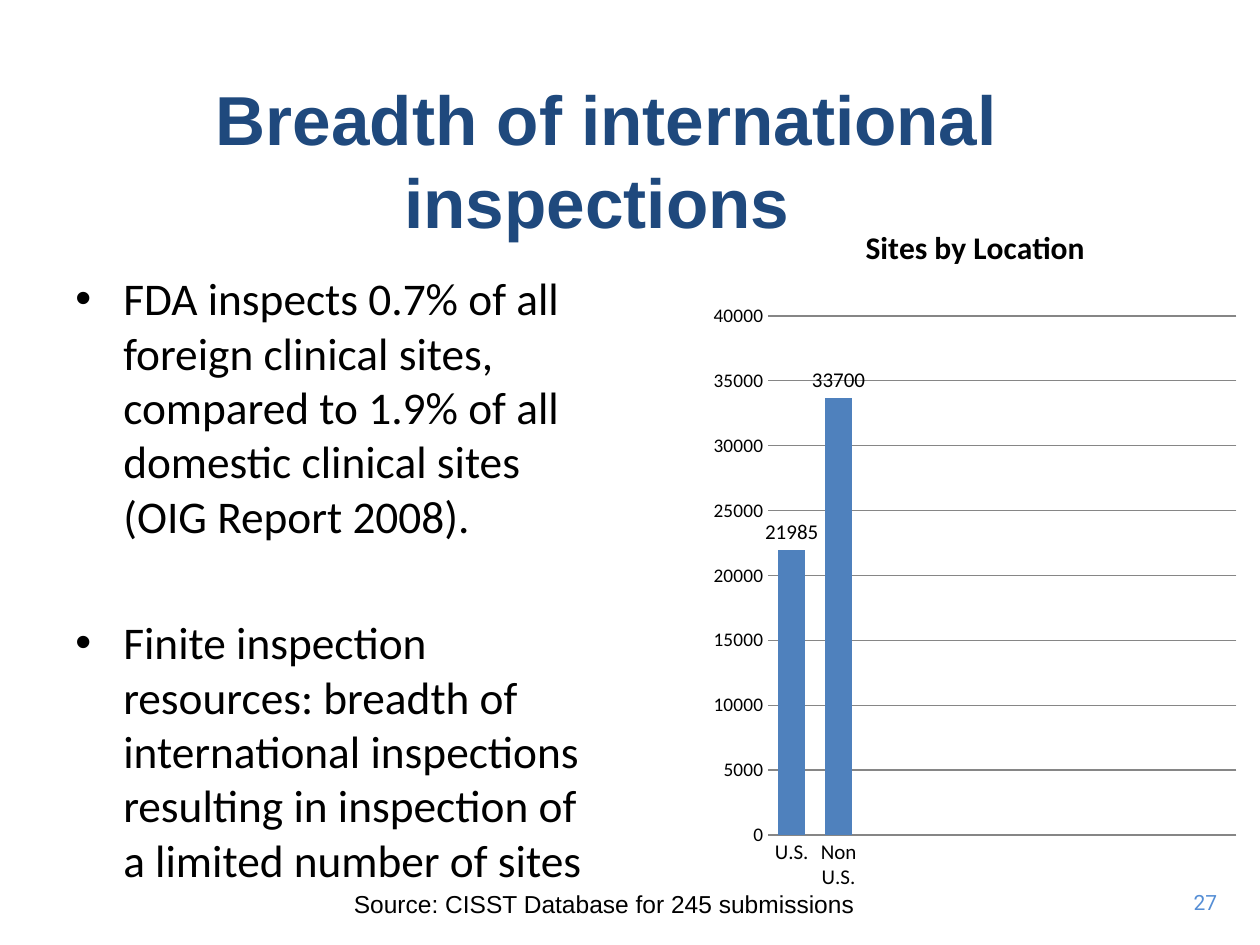
import pptx
import pptx.chart.data
import pptx.dml.color
import pptx.enum.chart
import pptx.enum.text
import pptx.util
from lxml import etree
from pptx.oxml.ns import qn

Inches, Pt = pptx.util.Inches, pptx.util.Pt
RGBColor = pptx.dml.color.RGBColor
ALIGN = pptx.enum.text.PP_ALIGN
ANCHOR = pptx.enum.text.MSO_ANCHOR

NAVY = RGBColor(0x1F, 0x49, 0x7D)
BLACK = RGBColor(0, 0, 0)
BAR_BLUE = RGBColor(0x4F, 0x81, 0xBD)
PALE_BLUE = RGBColor(0x55, 0x8E, 0xD5)
GRID_GRAY = RGBColor(0x86, 0x86, 0x86)

HEADING = "Breadth of international inspections "
POINTS = [
    "FDA inspects 0.7% of all foreign clinical sites, compared to 1.9% of all "
    "domestic clinical sites (OIG Report 2008).",
    "Finite inspection resources: breadth of international inspections "
    "resulting in inspection of a limited number of sites",
]
SOURCE = "Source: CISST Database for 245 submissions"
PAGE = "27"
CHART_TITLE = "Sites by Location"
SITES = [("U.S.", 21985), ("Non U.S.", 33700)]
CATEGORY_SLOTS = 10
PLOT_SHARES = {"x": 0.12, "y": 0.166, "w": 0.86, "h": 0.737}

HEADING_FONT = {"name": "Arial", "size": Pt(39.6), "bold": True}
POINT_FONT = {"name": "Calibri", "size": Pt(25.9)}
SOURCE_FONT = {"name": "Arial", "size": Pt(14)}
PAGE_FONT = {"name": "Roboto", "size": Pt(12)}


def style(font, formats, color):
    for key, value in formats.items():
        setattr(font, key, value)
    font.color.rgb = color


def add_bullet(paragraph):
    properties = paragraph._p.get_or_add_pPr()
    properties.set("marL", str(Inches(0.38)))
    properties.set("indent", str(-Inches(0.38)))
    etree.SubElement(properties, qn("a:buFont")).set("typeface", "Arial")
    etree.SubElement(properties, qn("a:buChar")).set("char", "•")


def add_text(slide, place, lines, formats, color, align=ALIGN.LEFT,
             anchor=ANCHOR.TOP, wrap=True, bullets=False, pitch=None, gap=0):
    frame = slide.shapes.add_textbox(*map(Inches, place)).text_frame
    frame.word_wrap = wrap
    frame.vertical_anchor = anchor
    for i, line in enumerate(lines):
        paragraph = frame.add_paragraph() if i else frame.paragraphs[0]
        if bullets:
            add_bullet(paragraph)
        paragraph.alignment = align
        if pitch:
            paragraph.line_spacing = Pt(pitch)
        if i:
            paragraph.space_before = Pt(gap)
        run = paragraph.add_run()
        run.text = line
        style(run.font, formats, color)


def fix_plot_area(chart):
    plot_area = chart._chartSpace.chart.plotArea
    for old in plot_area.findall(qn("c:layout")):
        plot_area.remove(old)
    layout = etree.Element(qn("c:layout"))
    plot_area.insert(0, layout)
    manual = etree.SubElement(layout, qn("c:manualLayout"))
    settings = {"layoutTarget": "inner", "xMode": "edge", "yMode": "edge", **PLOT_SHARES}
    for tag, value in settings.items():
        etree.SubElement(manual, qn("c:" + tag)).set("val", str(value))


def add_sites_chart(slide, place):
    spare = CATEGORY_SLOTS - len(SITES)
    data = pptx.chart.data.CategoryChartData()
    data.categories = [name for name, _ in SITES] + [""] * spare
    data.add_series("Series 1", [count for _, count in SITES] + [None] * spare)
    kinds = pptx.enum.chart
    chart = slide.shapes.add_chart(
        kinds.XL_CHART_TYPE.COLUMN_CLUSTERED, *map(Inches, place), data).chart
    style(chart.font, {"name": "Calibri", "size": Pt(18)}, BLACK)
    chart.has_legend = False
    chart.has_title = True
    chart.chart_title.text_frame.text = CHART_TITLE
    style(chart.chart_title.text_frame.paragraphs[0].runs[0].font,
          {"name": "Calibri", "size": Pt(18), "bold": True}, BLACK)

    for axis, size in ((chart.category_axis, 12), (chart.value_axis, 11)):
        axis.major_tick_mark = kinds.XL_TICK_MARK.NONE
        axis.minor_tick_mark = kinds.XL_TICK_MARK.NONE
        axis.tick_labels.font.size = Pt(size)
    chart.category_axis.format.line.color.rgb = GRID_GRAY
    values = chart.value_axis
    values.minimum_scale, values.maximum_scale, values.major_unit = 0, 40000, 5000
    values.format.line.fill.background()
    values.major_gridlines.format.line.color.rgb = GRID_GRAY

    plot = chart.plots[0]
    plot.gap_width, plot.overlap, plot.vary_by_categories = 75, -25, False
    bars = plot.series[0]
    bars.format.fill.solid()
    bars.format.fill.fore_color.rgb = BAR_BLUE
    labels = bars.data_labels
    labels.show_value = True
    labels.position = kinds.XL_LABEL_POSITION.OUTSIDE_END
    style(labels.font, {"name": "Calibri", "size": Pt(12)}, BLACK)
    fix_plot_area(chart)


def main():
    deck = pptx.Presentation()
    deck.slide_width, deck.slide_height = Inches(10), Inches(7.5)
    slide = deck.slides.add_slide(deck.slide_layouts[6])
    add_text(slide, (9.35, 7.01, 0.41, 0.3), [PAGE], PAGE_FONT, PALE_BLUE,
             align=ALIGN.RIGHT, wrap=False)
    add_text(slide, (0.13, 0.64, 9.37, 1.25), [HEADING], HEADING_FONT, NAVY,
             align=ALIGN.CENTER, anchor=ANCHOR.MIDDLE, pitch=47.5)
    add_text(slide, (0.5, 2.1, 4.42, 4.92), POINTS, POINT_FONT, BLACK,
             bullets=True, pitch=31, gap=41.5)
    add_sites_chart(slide, (5.58, 1.58, 4.32, 5.59))
    add_text(slide, (2.71, 7.01, 4.88, 0.57), [SOURCE], SOURCE_FONT, BLACK)
    deck.save("out.pptx")


if __name__ == "__main__":
    main()
